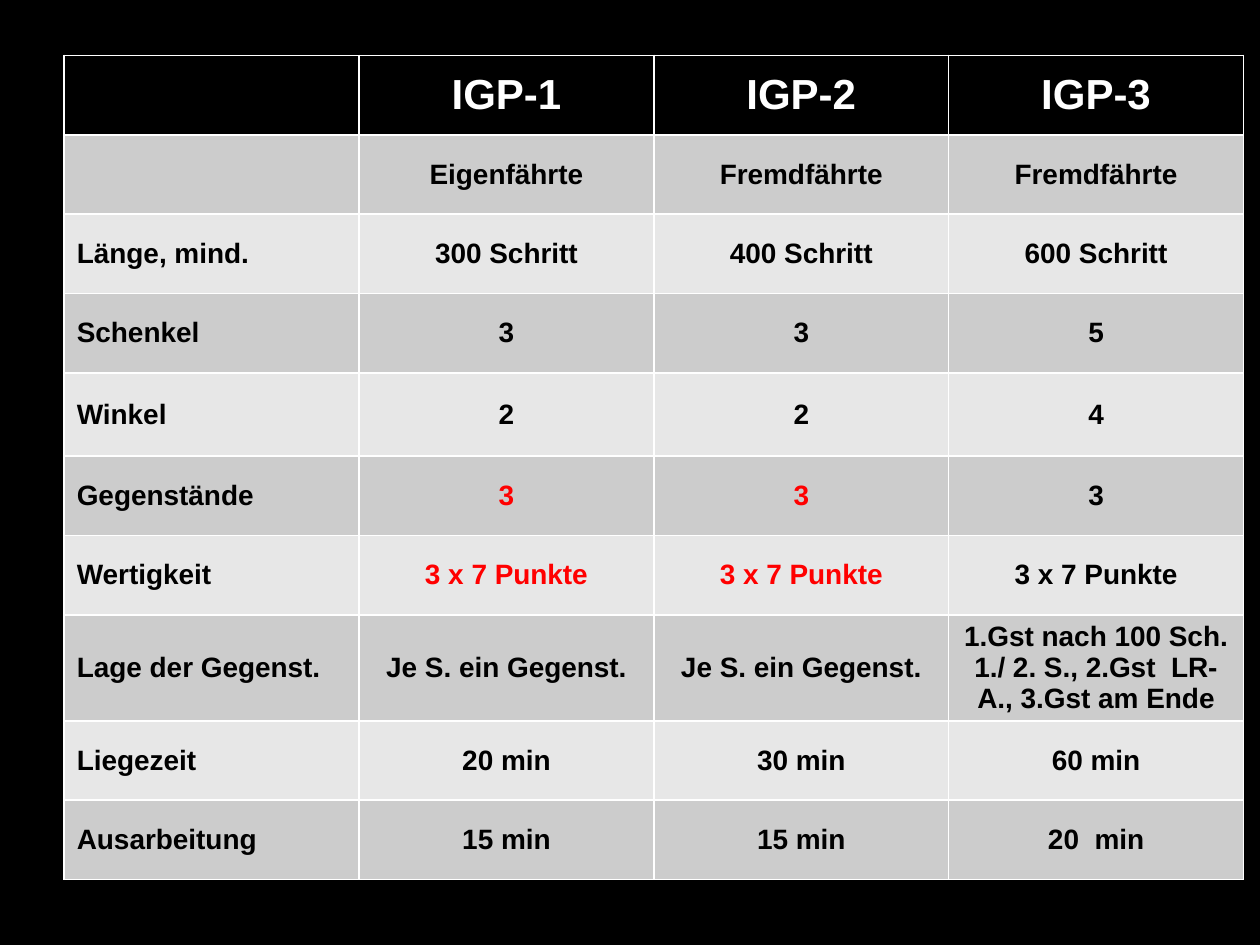
"""Build a slide comparing the tracking rules of the three IGP levels."""
from pptx import Presentation
from pptx.dml.color import RGBColor
from pptx.enum.text import MSO_ANCHOR, PP_ALIGN
from pptx.util import Inches, Pt

THEME = {
    "font": "Arial",
    "head size": Pt(24),
    "body size": Pt(16),
    "back": RGBColor(0x00, 0x00, 0x00),
    "head text": RGBColor(0xFF, 0xFF, 0xFF),
    "body text": RGBColor(0x00, 0x00, 0x00),
    "accent": RGBColor(0xFF, 0x00, 0x00),
    "bands": (RGBColor(0xE7, 0xE7, 0xE7), RGBColor(0xCC, 0xCC, 0xCC)),
}
ROWS = [
    ("", "IGP-1", "IGP-2", "IGP-3"),
    ("", "Eigenfährte", "Fremdfährte", "Fremdfährte"),
    ("Länge, mind.", "300 Schritt", "400 Schritt", "600 Schritt"),
    ("Schenkel", "3", "3", "5"),
    ("Winkel", "2", "2", "4"),
    ("Gegenstände", "3", "3", "3"),
    ("Wertigkeit", "3 x 7 Punkte", "3 x 7 Punkte", "3 x 7 Punkte"),
    ("Lage der Gegenst.", "Je S. ein Gegenst.", "Je S. ein Gegenst.",
     "1.Gst nach 100 Sch. 1./ 2. S., 2.Gst  LR-A., 3.Gst am Ende"),
    ("Liegezeit", "20 min", "30 min", "60 min"),
    ("Ausarbeitung", "15 min", "15 min", "20  min"),
]
HEIGHTS = {"Winkel": 0.66, "Lage der Gegenst.": 0.84}
MARKED = ("Gegenstände", "Wertigkeit")

deck = Presentation()
deck.slide_width, deck.slide_height = Inches(10), Inches(7.5)
slide = deck.slides.add_slide(deck.slide_layouts[6])
slide.background.fill.solid()
slide.background.fill.fore_color.rgb = THEME["back"]

table = slide.shapes.add_table(
    len(ROWS), len(ROWS[0]),
    Inches(0.51), Inches(0.44), Inches(9.37), Inches(6.57)).table
for column in table.columns:
    column.width = Inches(2.34)

for i, words in enumerate(ROWS):
    label = words[0]
    table.rows[i].height = Inches(HEIGHTS.get(label, 0.63))
    for j, text in enumerate(words):
        cell = table.cell(i, j)
        cell.vertical_anchor = MSO_ANCHOR.MIDDLE
        cell.fill.solid()
        cell.fill.fore_color.rgb = THEME["bands"][i % 2] if i else THEME["back"]
        if not text:
            continue
        line = cell.text_frame.paragraphs[0]
        line.alignment = PP_ALIGN.CENTER if j else PP_ALIGN.LEFT
        run = line.add_run()
        run.text = text
        font = run.font
        font.name, font.bold = THEME["font"], True
        font.size = THEME["body size"] if i else THEME["head size"]
        if i == 0:
            font.color.rgb = THEME["head text"]
        elif label in MARKED and j in (1, 2):
            font.color.rgb = THEME["accent"]
        else:
            font.color.rgb = THEME["body text"]

deck.save("out.pptx")
